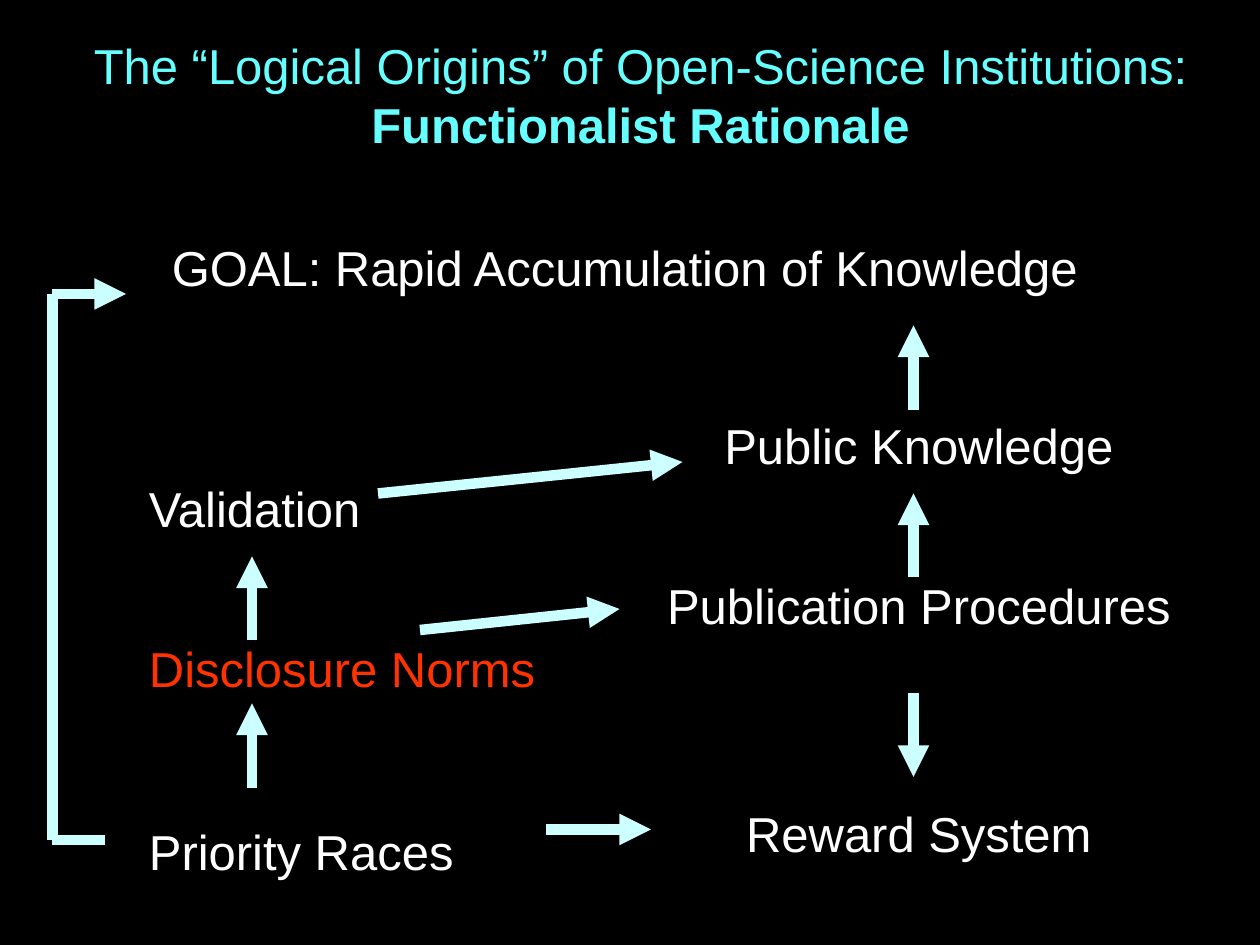
from dataclasses import dataclass

from lxml import etree
from pptx import Presentation
from pptx.dml.color import RGBColor
from pptx.enum.shapes import MSO_CONNECTOR
from pptx.enum.text import MSO_ANCHOR, MSO_AUTO_SIZE, PP_ALIGN
from pptx.oxml.ns import qn
from pptx.util import Pt

PX = 914400 // 120  # 120 px to the inch
STRAIGHT = MSO_CONNECTOR.STRAIGHT
TOP, MIDDLE = MSO_ANCHOR.TOP, MSO_ANCHOR.MIDDLE
LEFT, CENTER = PP_ALIGN.LEFT, PP_ALIGN.CENTER


@dataclass(frozen=True)
class Theme:
    background: RGBColor = RGBColor.from_string("000000")
    title: RGBColor = RGBColor.from_string("66FFFF")
    text: RGBColor = RGBColor.from_string("FFFFFF")
    accent: RGBColor = RGBColor.from_string("FF3300")
    arrow: RGBColor = RGBColor.from_string("CCFFFF")
    font: str = "Arial"
    size: float = 28
    arrow_width: float = 6
    spine_width: float = 6.25


theme = Theme()


def fill_text(holder, box, anchor, align, paragraphs):
    """Place holder at box (px); paragraphs are (space before in pt, runs of (text, color, bold))."""
    holder.left, holder.top, holder.width, holder.height = (n * PX for n in box)
    frame = holder.text_frame
    frame_format = {"word_wrap": True, "auto_size": MSO_AUTO_SIZE.NONE, "vertical_anchor": anchor}
    for key, value in frame_format.items():
        setattr(frame, key, value)
    for index, (gap, runs) in enumerate(paragraphs):
        paragraph = frame.add_paragraph() if index else frame.paragraphs[0]
        paragraph.alignment = align
        paragraph.space_before = Pt(gap)
        for words, color, bold in runs:
            run = paragraph.add_run()
            run.text = words
            run.font.color.rgb = color
            run_format = {"name": theme.font, "size": Pt(theme.size), "bold": bold}
            for key, value in run_format.items():
                setattr(run.font, key, value)


def add_link(start, end, width=theme.arrow_width, arrowhead=True):
    link = slide.shapes.add_connector(STRAIGHT, *(n * PX for n in start + end))
    link.line.color.rgb = theme.arrow
    link.line.width = Pt(width)
    if arrowhead:
        etree.SubElement(link.line._get_or_add_ln(), qn("a:tailEnd"), type="triangle")
    etree.SubElement(link._element.spPr, qn("a:effectLst"))


prs = Presentation()
prs.slide_width, prs.slide_height = 1200 * PX, 900 * PX
slide = prs.slides.add_slide(prs.slide_layouts[0])
slide.background.fill.solid()
slide.background.fill.fore_color.rgb = theme.background

heading = [
    ("The “Logical Origins” of Open-Science Institutions: ", theme.title, False),
    ("Functionalist Rationale", theme.title, True),
]
fill_text(slide.shapes.title, (20, 10, 1180, 160), MIDDLE, CENTER, [(0, heading)])

goal = [("GOAL: Rapid Accumulation of Knowledge", theme.text, False)]
fill_text(slide.placeholders[1], (120, 220, 950, 80), TOP, CENTER, [(4, goal)])

# Each stage: space before in pt, words, color
columns = [
    ((580, 390, 590, 380), CENTER, [
        (4, "Public Knowledge", theme.text),
        (57.5, "Publication Procedures", theme.text),
        (97, "Reward System", theme.text),
    ]),
    ((130, 450, 440, 380), LEFT, [
        (4, "Validation", theme.text),
        (57.5, "Disclosure Norms", theme.accent),
        (71, "Priority Races", theme.text),
    ]),
]
for box, align, stages in columns:
    column = slide.shapes.add_textbox(0, 0, PX, PX)
    fill_text(column, box, TOP, align,
              [(gap, [(words, color, False)]) for gap, words, color in stages])

# Vertical arrows: x, start y, direction
for x, y, direction in [(870, 390, -1), (870, 660, 1), (870, 550, -1),
                        (240, 610, -1), (240, 750, -1)]:
    add_link((x, y), (x, y + direction * 80))

# Arrows from the left column to the right one
for start, end in [((520, 790), (620, 790)),
                   ((400, 600), (590, 580)),
                   ((360, 470), (650, 440))]:
    add_link(start, end)

# Loop from Priority Races back to the goal
spine_x, races_y, goal_y = 50, 800, 280
add_link((100, races_y), (spine_x, races_y), arrowhead=False)
add_link((spine_x, races_y), (spine_x, goal_y), theme.spine_width, arrowhead=False)
add_link((spine_x, goal_y), (120, goal_y))

prs.save("out.pptx")
